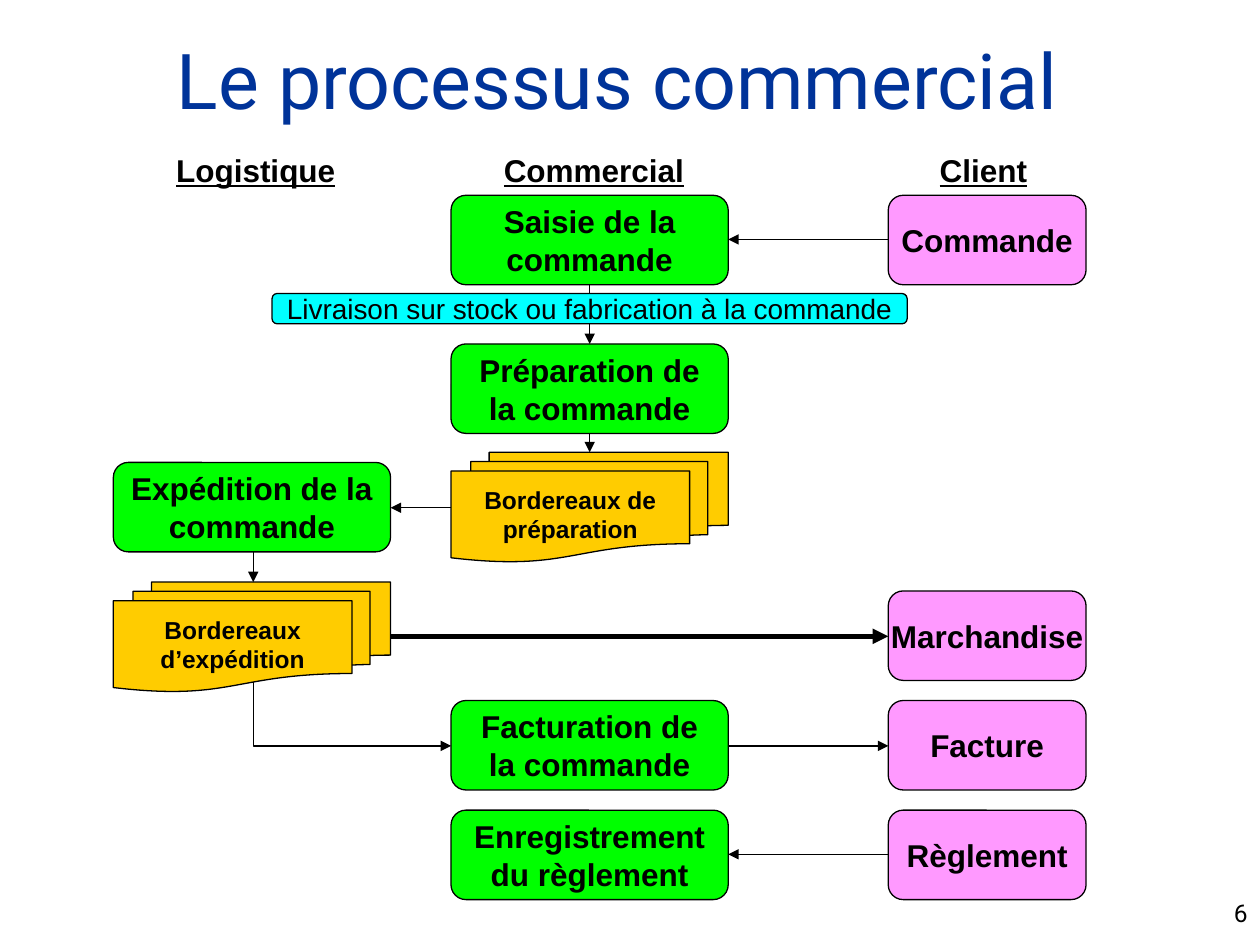
"""Build the slide that shows the sales process from order to payment."""
import pptx
import pptx.dml.color
import pptx.enum.shapes
import pptx.enum.text
import pptx.oxml.ns
import pptx.util
from lxml import etree
from pptx.util import Inches

COLORS = {"title": "003399", "black": "000000", "step": "00FF00",
          "client": "FF99FF", "document": "FFCC00", "note": "00FFFF"}
SHAPES = pptx.enum.shapes.MSO_SHAPE
CONNECTORS = pptx.enum.shapes.MSO_CONNECTOR
ALIGN = pptx.enum.text.PP_ALIGN
ANCHOR = pptx.enum.text.MSO_ANCHOR


def write(box, text, size=18, font="Arial", color="black", bold=True,
          underline=None, align=ALIGN.CENTER, anchor=ANCHOR.MIDDLE, wrap=True):
    frame = box.text_frame
    frame.word_wrap = wrap
    frame.vertical_anchor = anchor
    para = frame.paragraphs[0]
    para.alignment = align
    span = para.add_run()
    span.text = text
    span.font.name = font
    span.font.size = pptx.util.Pt(size)
    span.font.bold = bold
    span.font.underline = underline
    span.font.color.rgb = pptx.dml.color.RGBColor.from_string(COLORS[color])


def add_arrow(start, end, width=0.75, kind=CONNECTORS.STRAIGHT):
    arrow = page.shapes.add_connector(kind, *map(Inches, start + end))
    arrow.line.color.rgb = pptx.dml.color.RGBColor.from_string(COLORS["black"])
    arrow.line.width = pptx.util.Pt(width)
    etree.SubElement(arrow.line._get_or_add_ln(),
                     pptx.oxml.ns.qn("a:tailEnd"), type="triangle")
    etree.SubElement(arrow._element.spPr, pptx.oxml.ns.qn("a:effectLst"))
    return arrow


deck = pptx.Presentation()
deck.slide_width, deck.slide_height = Inches(10), Inches(7.5)
page = deck.slides.add_slide(deck.slide_layouts[5])

title = page.shapes.title
title.left, title.top, title.width, title.height = map(Inches, (0, 0, 8.5, 1.25))
write(title, "Le processus commercial", size=44, font="Roboto", color="title",
      bold=False, align=ALIGN.RIGHT)

number = page.shapes.add_textbox(*map(Inches, (7.92, 7.08, 2.08, 0.25)))
write(number, "6", size=14, font="Roboto", bold=False, align=ALIGN.RIGHT,
      anchor=ANCHOR.TOP)

for heading, left, width in (("Logistique", 1.3, 1.47),
                             ("Commercial", 3.9, 1.63), ("Client", 7.36, 0.9)):
    box = page.shapes.add_textbox(*map(Inches, (left, 1.15, width, 0.4)))
    write(box, heading, underline=True, align=ALIGN.LEFT, anchor=ANCHOR.TOP,
          wrap=False)

logistics, sales, client = 0.9, 3.58, 7.05
step_width, client_width, step_height = 2.2, 1.57, 0.71
logistics_middle = logistics + step_width / 2 + 0.01
sales_middle = sales + step_width / 2
sales_right = sales + step_width
documents_right = logistics + step_width

add_arrow((sales_middle, 2.26), (sales_middle, 2.73))

STYLES = {
    "step": (SHAPES.ROUNDED_RECTANGLE, step_width, step_height, 18, True, True),
    "client": (SHAPES.ROUNDED_RECTANGLE, client_width, step_height, 18, True, False),
    "document": (SHAPES.FLOWCHART_MULTIDOCUMENT, step_width, 0.87, 14, True, True),
    "note": (SHAPES.ROUNDED_RECTANGLE, 5.04, 0.24, 16, False, False),
}
for style, text, left, top in (
        ("step", "Saisie de la commande", sales, 1.55),
        ("step", "Préparation de la commande", sales, 2.73),
        ("document", "Bordereaux de préparation", sales, 3.59),
        ("step", "Expédition de la commande", logistics, 3.67),
        ("document", "Bordereaux d’expédition", logistics, 4.62),
        ("step", "Facturation de la commande", sales, 5.56),
        ("step", "Enregistrement du règlement", sales, 6.43),
        ("client", "Commande", client, 1.55),
        ("client", "Marchandise", client, 4.69),
        ("client", "Facture", client, 5.56),
        ("client", "Règlement", client, 6.43),
        ("note", "Livraison sur stock ou fabrication à la commande", 2.16, 2.33)):
    kind, width, height, size, bold, wrap = STYLES[style]
    box = page.shapes.add_shape(kind, *map(Inches, (left, top, width, height)))
    box.shadow.inherit = False
    box.fill.solid()
    box.fill.fore_color.rgb = pptx.dml.color.RGBColor.from_string(COLORS[style])
    box.line.color.rgb = pptx.dml.color.RGBColor.from_string(COLORS["black"])
    box.line.width = pptx.util.Pt(0.75)
    write(box, text, size=size, bold=bold, wrap=wrap)

for start, end, width in (
        ((client, 1.9), (sales_right, 1.9), 0.75),
        ((sales_middle, 3.44), (sales_middle, 3.59), 0.75),
        ((sales, 4.03), (documents_right, 4.03), 0.75),
        ((logistics_middle, 4.38), (logistics_middle, 4.62), 0.75),
        ((documents_right, 5.05), (client, 5.05), 3),
        ((sales_right, 5.92), (client, 5.92), 0.75),
        ((client, 6.78), (sales_right, 6.78), 0.75)):
    add_arrow(start, end, width)

elbow_top, elbow_bottom = 5.41, 5.92
across, down = sales - logistics_middle, elbow_bottom - elbow_top
center_x = logistics_middle + across / 2
center_y = elbow_top + down / 2
elbow = add_arrow((center_x + down / 2, center_y - across / 2),
                  (center_x - down / 2, center_y + across / 2),
                  kind=CONNECTORS.ELBOW)
elbow._element.spPr.find(pptx.oxml.ns.qn("a:prstGeom")).set("prst", "bentConnector2")
elbow._element.spPr.find(pptx.oxml.ns.qn("a:xfrm")).set("rot", str(270 * 60000))

deck.save("out.pptx")
